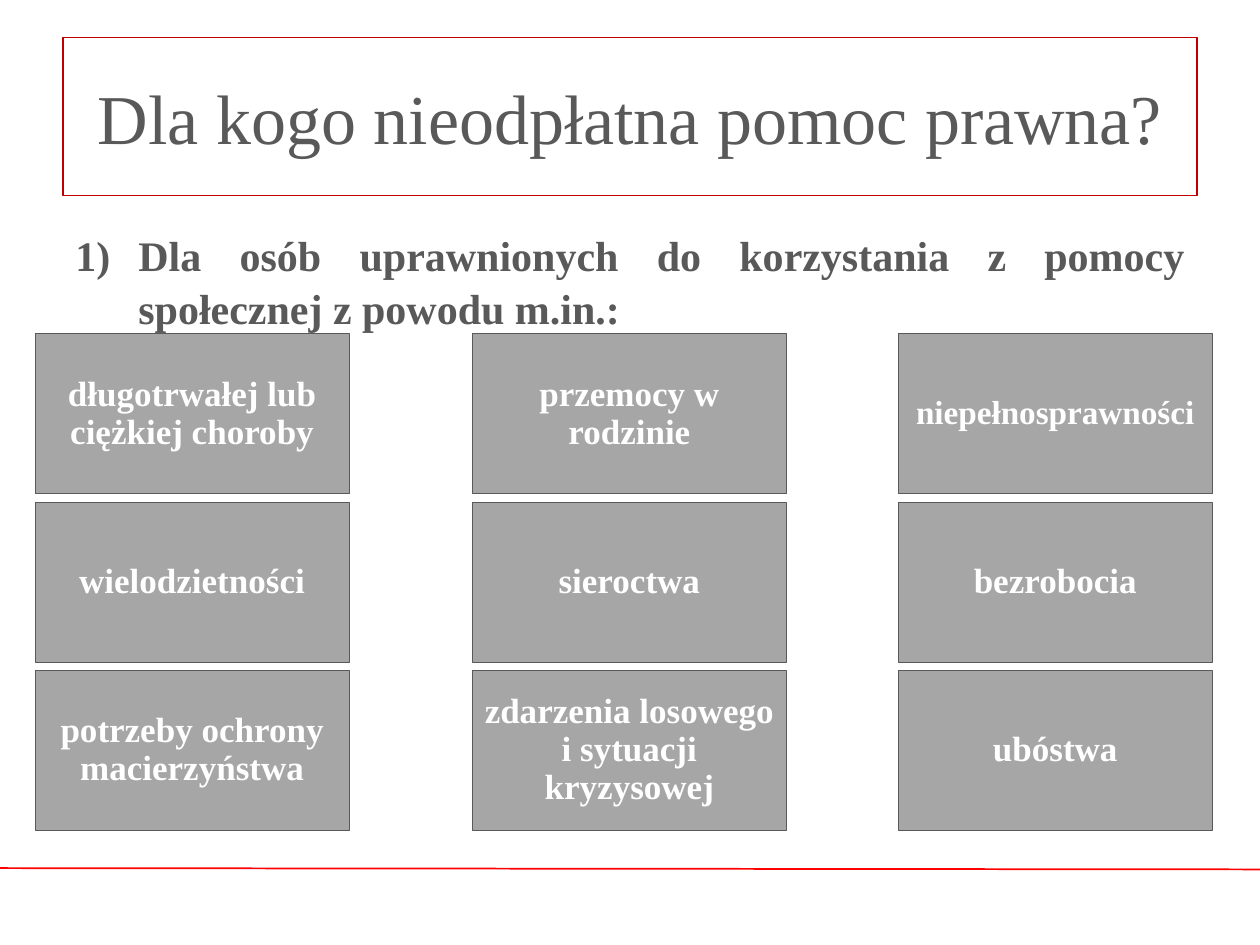
from dataclasses import dataclass

from lxml import etree
from pptx import Presentation
from pptx.dml.color import RGBColor
from pptx.enum import shapes, text
from pptx.oxml.ns import qn
from pptx.util import Inches, Pt

TITLE = "Dla kogo nieodpłatna pomoc prawna?"
LEAD = "Dla osób uprawnionych do korzystania z pomocy społecznej z powodu m.in.:"
CAUSES = [
    ["długotrwałej lub ciężkiej choroby", "przemocy w rodzinie", "niepełnosprawności"],
    ["wielodzietności", "sieroctwa", "bezrobocia"],
    ["potrzeby ochrony macierzyństwa", "zdarzenia losowego i sytuacji kryzysowej", "ubóstwa"],
]
COLS = [0.28, 3.75, 7.13]
TOP, STEP = 2.65, 1.335
WIDE, HIGH = 2.49, 1.27
PAD = 0.08


@dataclass(frozen=True)
class Theme:
    font: str = "Times New Roman"
    ink: str = "595959"
    white: str = "FFFFFF"
    tile: str = "A6A6A6"
    frame: str = "C00000"
    rule: str = "FF0000"
    title: int = 40
    lead: int = 24
    cause: int = 20
    long: int = 19


LOOK = Theme()


def rgb(code):
    return RGBColor.from_string(code)


def place(shape, *box):
    shape.left, shape.top, shape.width, shape.height = map(Inches, box)


def paint(shape, fill, line, width):
    shape.fill.solid()
    shape.fill.fore_color.rgb = rgb(fill)
    shape.line.color.rgb = rgb(line)
    shape.line.width = Pt(width)


def write(par, words, size, color, align, bold=True):
    par.alignment = align
    run = par.add_run()
    run.text = words
    font = run.font
    font.name, font.size, font.bold = LOOK.font, Pt(size), bold
    font.color.rgb = rgb(color)


def add_title(slide):
    title = slide.shapes.title
    place(title, 0.5, 0.3, 9, 1.25)
    paint(title, LOOK.white, LOOK.frame, 0.75)
    frame = title.text_frame
    frame.auto_size = text.MSO_AUTO_SIZE.NONE
    frame.vertical_anchor = text.MSO_ANCHOR.MIDDLE
    write(frame.paragraphs[0], TITLE, LOOK.title, LOOK.ink, text.PP_ALIGN.CENTER, False)


def add_lead(slide):
    """Add the numbered sentence with a hanging indent."""
    box = slide.shapes.add_textbox(*map(Inches, (0.5, 1.75, 9, 5.07)))
    box.text_frame.word_wrap = True
    par = box.text_frame.paragraphs[0]
    props = par._p.get_or_add_pPr()
    props.set("marL", str(Inches(0.5)))
    props.set("indent", str(-Inches(0.5)))
    etree.SubElement(props, qn("a:buFont"), typeface="+mj-lt")
    etree.SubElement(props, qn("a:buAutoNum"), type="arabicParenR")
    par.line_spacing = 1.05
    write(par, LEAD, LOOK.lead, LOOK.ink, text.PP_ALIGN.JUSTIFY)


def add_rule(slide):
    ends = map(Inches, (0, 6.89, 10, 6.9))
    rule = slide.shapes.add_connector(shapes.MSO_CONNECTOR.STRAIGHT, *ends)
    rule.line.color.rgb = rgb(LOOK.rule)
    rule.line.width = Pt(1)
    etree.SubElement(rule._element.spPr, qn("a:effectLst"))


def add_tile(slide, left, top, words):
    box = map(Inches, (left, top, WIDE, HIGH))
    tile = slide.shapes.add_shape(shapes.MSO_SHAPE.RECTANGLE, *box)
    tile.shadow.inherit = False
    paint(tile, LOOK.tile, LOOK.ink, 0.5)
    frame = tile.text_frame
    frame.word_wrap = True
    frame.vertical_anchor = text.MSO_ANCHOR.MIDDLE
    frame.margin_left = frame.margin_right = Inches(PAD)
    frame.margin_top = frame.margin_bottom = Inches(PAD)
    par = frame.paragraphs[0]
    par.line_spacing = 0.9
    size = LOOK.long if max(map(len, words.split())) > 16 else LOOK.cause
    write(par, words, size, LOOK.white, text.PP_ALIGN.CENTER)


def main():
    deck = Presentation()
    deck.slide_width, deck.slide_height = Inches(10), Inches(7.5)
    slide = deck.slides.add_slide(deck.slide_layouts[5])
    add_title(slide)
    add_lead(slide)
    add_rule(slide)
    for row, causes in enumerate(CAUSES):
        for left, words in zip(COLS, causes):
            add_tile(slide, left, TOP + row * STEP, words)
    deck.save("out.pptx")


if __name__ == "__main__":
    main()
